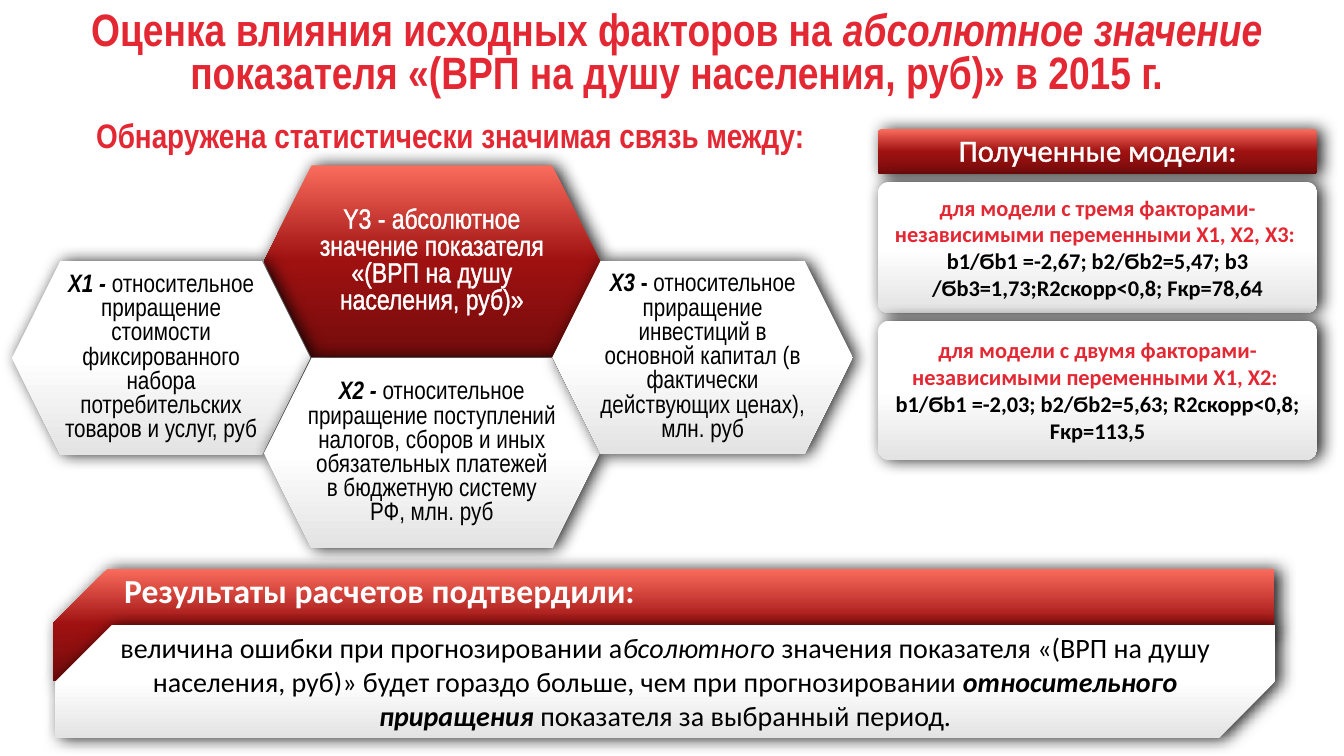
from dataclasses import dataclass

from lxml import etree
from pptx import Presentation
from pptx.dml.color import RGBColor
from pptx.enum.shapes import MSO_SHAPE
from pptx.enum.text import MSO_ANCHOR, MSO_AUTO_SIZE, PP_ALIGN
from pptx.oxml import parse_xml
from pptx.oxml.ns import nsdecls, qn
from pptx.util import Pt

HEXAGON = MSO_SHAPE.HEXAGON
ROUNDED = MSO_SHAPE.ROUNDED_RECTANGLE
SNIPPED = MSO_SHAPE.SNIP_2_DIAG_RECTANGLE
MIDDLE, BOTTOM = MSO_ANCHOR.MIDDLE, MSO_ANCHOR.BOTTOM
CENTER, LEFT = PP_ALIGN.CENTER, PP_ALIGN.LEFT


@dataclass(frozen=True)
class Theme:
    narrow: str = "Arial Narrow"
    sans: str = "Calibri"
    accent: str = "E32833"
    dark: str = "740C0C"
    black: str = "000000"
    white: str = "FFFFFF"
    red_fill: tuple = ("FA6C5C", "9F1111", "740C0C")
    pale_fill: tuple = ("FFFFFF", "FFFFFF", "E3E3E3")
    title: float = 32.4
    subtitle: float = 24.3
    banner: float = 24
    header: float = 22
    body: float = 20
    factor: float = 18
    model: float = 16


THEME = Theme()

# A paragraph is a list of (text, style) runs; style letters: b bold, i italic.
TITLE = [
    ("Оценка влияния исходных факторов на ", "b"),
    ("абсолютное значение", "bi"),
    (" показателя «(ВРП на душу населения, руб)» в 2015 г.", "b"),
]
SUBTITLE = [("Обнаружена статистически значимая связь между: ", "b")]
TARGET = [("Y3 - абсолютное значение показателя «(ВРП на душу населения, руб)»", "")]
FACTORS = [
    ([("X1 - ", "bi"),
      ("относительное приращение стоимости фиксированного набора "
       "потребительских товаров и услуг, руб", "")],
     (8.6, 186.5, 213.1, 138.2)),
    ([("X2 - ", "bi"),
      ("относительное приращение поступлений налогов, сборов и иных "
       "обязательных платежей в бюджетную систему РФ, млн. руб", "")],
     (188.6, 255.6, 239.8, 136.1)),
    ([("X3", "bi"), (" - ", "b"),
      ("относительное приращение инвестиций в основной капитал "
       "(в фактически действующих ценах), млн. руб", "")],
     (394.6, 186.5, 214.6, 137.5)),
]
MODELS_HEADER = [("Полученные модели:", "")]
MODELS = [
    ("для модели с тремя факторами-независимыми переменными X1, X2, X3: ",
     "b1/Ϭb1 =-2,67; b2/Ϭb2=5,47; b3 /Ϭb3=1,73;R2скорр<0,8; Fкр=78,64", 93.6),
    ("для модели с двумя факторами-независимыми переменными X1, X2: ",
     "b1/Ϭb1 =-2,03; b2/Ϭb2=5,63; R2скорр<0,8; Fкр=113,5", 99.4),
]
RESULT_HEADER = [("Результаты расчетов подтвердили:", "b")]
RESULT = [
    ("величина ошибки при прогнозировании а", ""),
    ("бсолютного", "i"),
    (" значения показателя «(ВРП на душу населения, руб)» будет гораздо больше, "
     "чем при прогнозировании ", ""),
    ("относительного приращения", "bi"),
    (" показателя за выбранный период.", ""),
]

MODELS_LEFT, MODELS_TOP, MODELS_WIDTH = 627.1, 92.2, 313.9
HEADER_HEIGHT, MODELS_GAP = 32.4, 5.4


def setup_frame(frame, insets, anchor=MIDDLE):
    frame.word_wrap = True
    frame.auto_size = MSO_AUTO_SIZE.NONE
    frame.vertical_anchor = anchor
    (frame.margin_left, frame.margin_top,
     frame.margin_right, frame.margin_bottom) = map(Pt, insets)


def write(paragraph, runs, font, size, color, spacing=1.0, outline=None, align=CENTER):
    """Fill a paragraph with runs; outline is (colour, width) of the letter edge."""
    paragraph.alignment = align
    paragraph.line_spacing = spacing
    paragraph.space_before = Pt(0)
    for text, style in runs:
        run = paragraph.add_run()
        run.text = text
        run.font.name = font
        run.font.size = Pt(size)
        run.font.bold = "b" in style
        run.font.italic = "i" in style
        run.font.color.rgb = RGBColor.from_string(color)
        if outline:
            edge, width = outline
            run.font.fill  # the letter edge must stand before the fill
            run._r.get_or_add_rPr().insert(0, parse_xml(
                f'<a:ln {nsdecls("a")} w="{Pt(width)}"><a:solidFill>'
                f'<a:srgbClr val="{edge}"/></a:solidFill></a:ln>'))


def add_panel(group, preset, box, colors, insets, anchor=MIDDLE, adjustments=()):
    """Add a shape with a top-to-bottom gradient and a soft shadow; return its text frame."""
    panel = group.shapes.add_shape(preset, *map(Pt, box))
    for index, value in enumerate(adjustments):
        panel.adjustments[index] = value
    panel.line.fill.background()
    panel.fill.gradient()
    gradient = panel._element.spPr.find(qn("a:gradFill"))
    stops = "".join(
        f'<a:gs pos="{index * 50000}"><a:srgbClr val="{color}"/></a:gs>'
        for index, color in enumerate(colors))
    gradient.getparent().replace(gradient, parse_xml(
        f'<a:gradFill {nsdecls("a")} rotWithShape="1"><a:gsLst>{stops}</a:gsLst>'
        '<a:lin ang="5400000" scaled="0"/></a:gradFill>'))
    panel.shadow.inherit = False
    effects = panel._element.spPr.find(qn("a:effectLst"))
    shadow = etree.SubElement(effects, qn("a:outerShdw"), blurRad=str(Pt(12)),
                              dist=str(Pt(3)), dir="0", rotWithShape="0")
    shade = etree.SubElement(shadow, qn("a:srgbClr"), val=THEME.black)
    etree.SubElement(shade, qn("a:alpha"), val="87000")
    setup_frame(panel.text_frame, insets, anchor)
    return panel.text_frame


def add_headings(slide):
    edge = (THEME.dark, 0.52)
    title = slide.shapes.title
    title.left, title.top, title.width, title.height = map(Pt, (16.6, 7.2, 933.8, 64.1))
    subtitle = slide.shapes.add_textbox(*map(Pt, (46.1, 78.5, 556.6, 44.6)))
    for holder, runs, size, spacing in ((title, TITLE, THEME.title, 0.8),
                                        (subtitle, SUBTITLE, THEME.subtitle, 0.6)):
        setup_frame(holder.text_frame, (7.2, 3.6, 7.2, 3.6))
        write(holder.text_frame.paragraphs[0], runs, THEME.narrow, size,
              THEME.accent, spacing, edge)


def add_factors(slide):
    group = slide.shapes.add_group_shape()
    insets = (0, 6, 0, 6)
    target = add_panel(group, HEXAGON, (188.6, 118.1, 239.8, 136.8), THEME.red_fill, insets)
    write(target.paragraphs[0], TARGET, THEME.narrow, THEME.body, THEME.white,
          0.8, (THEME.white, 0.75))
    for runs, box in FACTORS:
        factor = add_panel(group, HEXAGON, box, THEME.pale_fill, insets)
        write(factor.paragraphs[0], runs, THEME.narrow, THEME.factor, THEME.black, 0.8)


def add_models(slide):
    group = slide.shapes.add_group_shape()
    insets, corner = (6, 6, 6, 6), (0.083,)
    header = add_panel(group, ROUNDED, (MODELS_LEFT, MODELS_TOP, MODELS_WIDTH, HEADER_HEIGHT),
                       THEME.red_fill, insets, adjustments=corner)
    write(header.paragraphs[0], MODELS_HEADER, THEME.sans, THEME.header, THEME.white,
          0.9, (THEME.white, 0.75))
    top = MODELS_TOP + HEADER_HEIGHT + MODELS_GAP
    for name, estimates, height in MODELS:
        model = add_panel(group, ROUNDED, (MODELS_LEFT, top, MODELS_WIDTH, height),
                          THEME.pale_fill, insets, adjustments=corner)
        write(model.paragraphs[0], [(name, "b")], THEME.sans, THEME.model, THEME.accent,
              outline=(THEME.dark, 0.75))
        write(model.add_paragraph(), [(estimates, "b")], THEME.sans, THEME.model, THEME.black)
        top += height + MODELS_GAP


def add_result(slide):
    group = slide.shapes.add_group_shape()
    header = add_panel(group, SNIPPED, (38.2, 406.1, 871.9, 80.6), THEME.red_fill,
                       (31, 0, 6, 31), BOTTOM, (0.481, 0))
    write(header.paragraphs[0], RESULT_HEADER, THEME.sans, THEME.banner, THEME.white,
          0.9, align=LEFT)
    result = add_panel(group, SNIPPED, (39.6, 446.4, 871.2, 80.6), THEME.pale_fill,
                       (6, 6, 6, 6), adjustments=(0.5, 0))
    write(result.paragraphs[0], RESULT, THEME.sans, THEME.body, THEME.black)


def main():
    deck = Presentation()
    deck.slide_width, deck.slide_height = Pt(960), Pt(540)
    slide = deck.slides.add_slide(deck.slide_layouts[5])
    add_factors(slide)
    add_models(slide)
    add_headings(slide)
    add_result(slide)
    deck.save("out.pptx")


if __name__ == "__main__":
    main()
